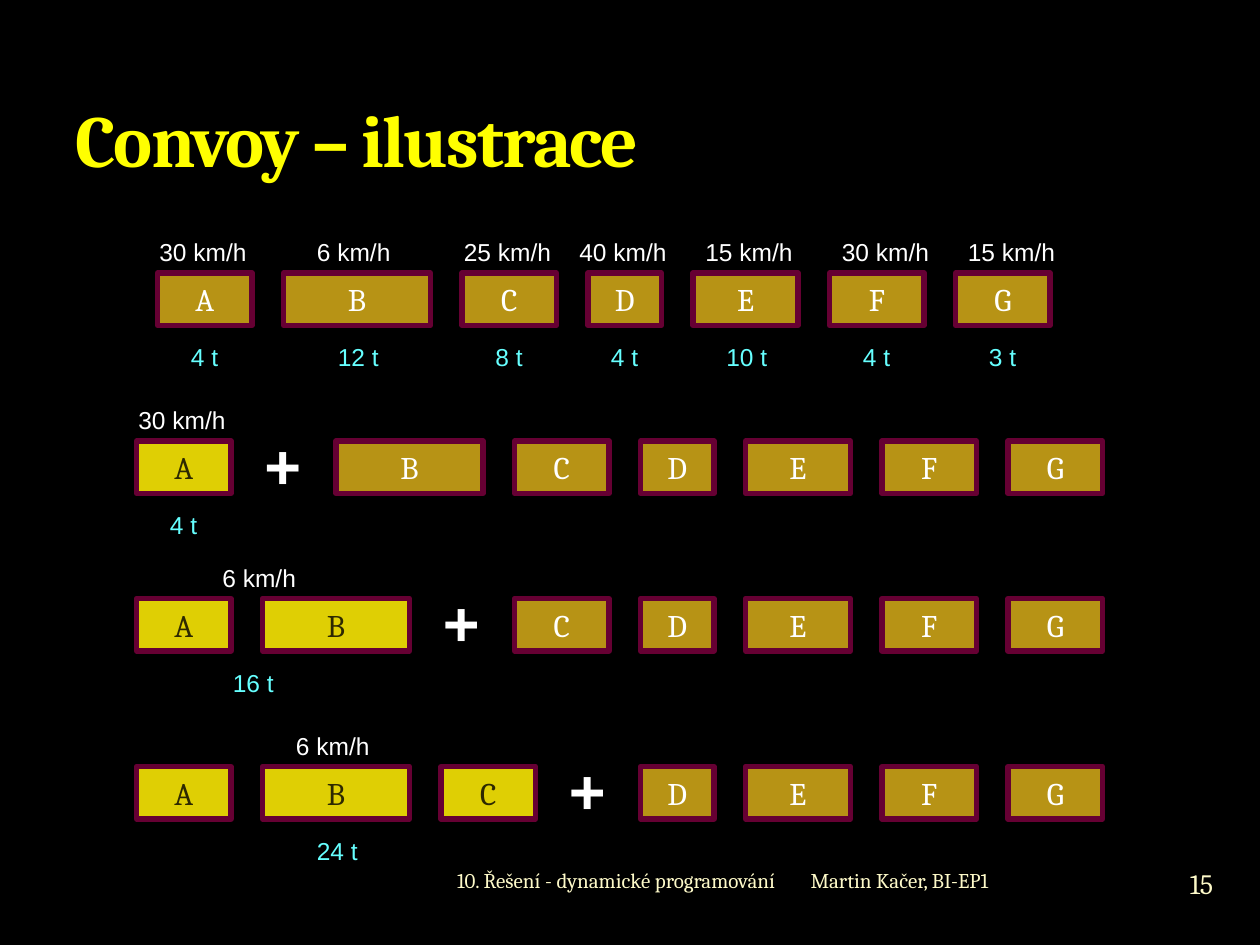
from pptx import Presentation
from pptx.dml.color import RGBColor
from pptx.enum.shapes import MSO_SHAPE
from pptx.enum.text import MSO_ANCHOR, MSO_AUTO_SIZE, PP_ALIGN
from pptx.util import Cm, Pt

RECTANGLE = MSO_SHAPE.RECTANGLE
MIDDLE, BOTTOM = MSO_ANCHOR.MIDDLE, MSO_ANCHOR.BOTTOM
LEFT, CENTER, RIGHT = PP_ALIGN.LEFT, PP_ALIGN.CENTER, PP_ALIGN.RIGHT
FIT_SHAPE = MSO_AUTO_SIZE.SHAPE_TO_FIT_TEXT

COLORS = {
    "background": "000000",
    "title": "FFFF00",
    "waiting": "B79315",
    "waiting_text": "FFFFFF",
    "chosen": "DFCF04",
    "chosen_text": "2D2901",
    "border": "660033",
    "speed": "FFFFFF",
    "load": "66FFFF",
    "plus": "FFFFFF",
    "footer": "FEFAC9",
}

# Vehicle widths, gaps and positions are counted in grid steps of 1/12 inch.
VEHICLES = {"A": 9, "B": 14, "C": 9, "D": 7, "E": 10, "F": 9, "G": 9}
VEHICLE_HEIGHT = 5
GAP = 3
PLUS_GAP = 10

# Each row: left, top, number of chosen vehicles, speeds and loads as (left, text)
ROWS = [
    (15, 26, 0,
     [(14, "30 km/h"), (29, "6 km/h"), (43, "25 km/h"), (54, "40 km/h"),
      (66, "15 km/h"), (79, "30 km/h"), (91, "15 km/h")],
     [(17, "4 t"), (31, "12 t"), (46, "8 t"), (57, "4 t"),
      (68, "10 t"), (81, "4 t"), (93, "3 t")]),
    (13, 42, 1, [(12, "30 km/h")], [(15, "4 t")]),
    (13, 57, 2, [(20, "6 km/h")], [(21, "16 t")]),
    (13, 73, 3, [(27, "6 km/h")], [(29, "24 t")]),
]


def grid(steps):
    return Cm(steps * 2.54 / 12)


def color(name):
    return RGBColor.from_string(COLORS[name])


def style_text(frame, text, color_name, size, font, align=LEFT, bold=False):
    frame.text = text
    paragraph = frame.paragraphs[0]
    paragraph.alignment = align
    paragraph.font.name = font
    paragraph.font.size = Pt(size)
    paragraph.font.bold = bold
    paragraph.font.color.rgb = color(color_name)


def add_title(slide, text):
    title = slide.shapes.title
    title.left, title.top, title.width, title.height = Cm(1.27), Cm(0.43), Cm(22.86), Cm(3.38)
    frame = title.text_frame
    frame.vertical_anchor = BOTTOM
    style_text(frame, text, "title", 42, "Cambria", bold=True)
    frame.paragraphs[0].runs[0].font._element.set("spc", "-100")


def add_vehicle(group, name, left, top, state):
    vehicle = group.shapes.add_shape(
        RECTANGLE, grid(left), grid(top), grid(VEHICLES[name]), grid(VEHICLE_HEIGHT))
    vehicle.shadow.inherit = False
    vehicle.fill.solid()
    vehicle.fill.fore_color.rgb = color(state)
    vehicle.line.color.rgb = color("border")
    vehicle.line.width = Pt(3)
    vehicle.text_frame.vertical_anchor = MIDDLE
    style_text(vehicle.text_frame, name, f"{state}_text", 18, "Cambria", CENTER)


def add_label(group, text, left, top, width, height, color_name, size=14, bold=False):
    label = group.shapes.add_textbox(grid(left), grid(top), width, height)
    frame = label.text_frame
    frame.word_wrap = False
    frame.auto_size = FIT_SHAPE
    style_text(frame, text, color_name, size, "Arial", bold=bold)


def add_labels(group, labels, top, color_name, padding):
    """Add 14 pt labels whose boxes grow with the number of characters."""
    for left, text in labels:
        add_label(group, text, left, top, Cm(0.28 * len(text) + padding), Cm(0.86), color_name)


def add_row(slide, left, top, chosen, speeds, loads):
    """Add one convoy; a plus follows the chosen vehicles."""
    group = slide.shapes.add_group_shape()
    for position, (name, width) in enumerate(VEHICLES.items(), start=1):
        add_vehicle(group, name, left, top, "chosen" if position <= chosen else "waiting")
        left += width
        if position == chosen:
            add_label(group, "+", left + 2, top - 2, Cm(1.27), Cm(1.8), "plus", 36, True)
            left += PLUS_GAP
        else:
            left += GAP
    add_labels(group, speeds, top - 4, "speed", 0.33)
    add_labels(group, loads, top + 6, "load", 0.23)


def add_footer(slide, text, left, top, width, height, size=12, align=LEFT, inset=None):
    footer = slide.shapes.add_textbox(Cm(left), Cm(top), Cm(width), Cm(height))
    frame = footer.text_frame
    frame.word_wrap = True
    frame.vertical_anchor = MIDDLE
    if inset is not None:
        frame.margin_left = frame.margin_right = Cm(inset)
        frame.margin_top = frame.margin_bottom = Cm(inset)
    style_text(frame, text, "footer", size, "Cambria", align)


def main():
    presentation = Presentation()
    presentation.slide_width, presentation.slide_height = Cm(25.4), Cm(19.05)
    slide = presentation.slides.add_slide(presentation.slide_layouts[5])
    slide.background.fill.solid()
    slide.background.fill.fore_color.rgb = color("background")

    add_title(slide, "Convoy – ilustrace")
    for row in ROWS:
        add_row(slide, *row)
    add_footer(slide, "Martin Kačer, BI-EP1", 16.09, 17.22, 7.2, 1.06)
    add_footer(slide, "15", 23.37, 17.17, 1.7, 1.27, size=16, align=CENTER, inset=0)
    add_footer(slide, "10. Řešení - dynamické programování", 5.93, 17.22, 9.95, 1.06, align=RIGHT)

    presentation.save("out.pptx")


if __name__ == "__main__":
    main()
